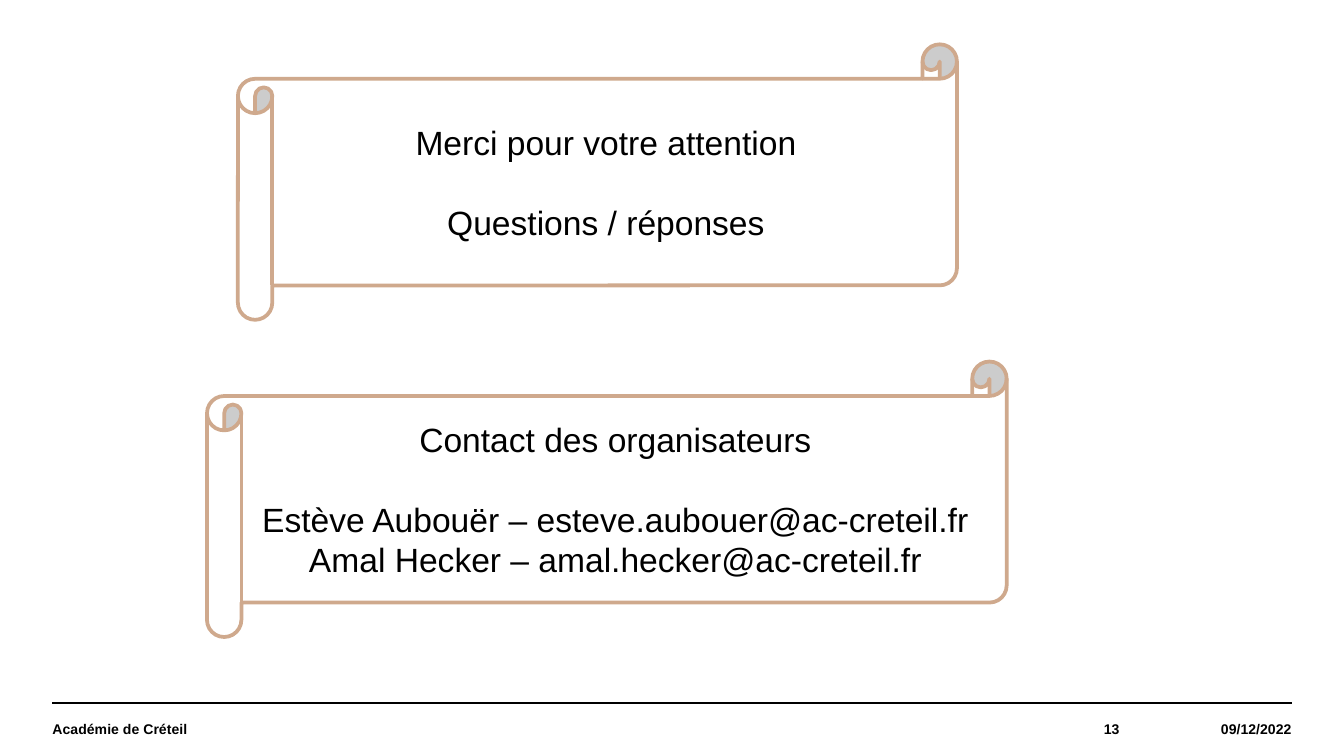
from dataclasses import dataclass

from lxml import etree
from pptx import Presentation
from pptx import util as u
from pptx.dml.color import RGBColor
from pptx.enum import shapes, text
from pptx.oxml.ns import qn


@dataclass(frozen=True)
class Theme:
    font: str = "Arial"
    ink: str = "000000"
    paper: str = "FFFFFF"
    scroll_edge: str = "CFA98D"
    body_size: float = 18
    footer_size: float = 7.5
    scroll_line: float = 2
    rule_line: float = 0.8
    heading_gap: float = 21


def write(paragraph, content, *, theme, size, bold=False,
          align=text.PP_ALIGN.LEFT, space_before=0):
    paragraph.alignment = align
    paragraph.space_before = u.Pt(space_before)
    run = paragraph.add_run()
    run.text = content
    run.font.name = theme.font
    run.font.size = u.Pt(size)
    run.font.bold = bold
    run.font.color.rgb = RGBColor.from_string(theme.ink)


class SlideBuilder:
    def __init__(self, slide, theme):
        self.slide = slide
        self.theme = theme

    def rule(self, left, right, y):
        rule = self.slide.shapes.add_connector(
            shapes.MSO_CONNECTOR.STRAIGHT,
            u.Inches(left), u.Inches(y), u.Inches(right), u.Inches(y))
        rule.line.color.rgb = RGBColor.from_string(self.theme.ink)
        rule.line.width = u.Pt(self.theme.rule_line)
        etree.SubElement(rule._element.spPr, qn("a:effectLst"))

    def footer(self, content, left, top, width, height, align):
        box = self.slide.shapes.add_textbox(
            u.Inches(left), u.Inches(top), u.Inches(width), u.Inches(height))
        frame = box.text_frame
        frame.word_wrap = True
        frame.vertical_anchor = text.MSO_ANCHOR.MIDDLE
        frame.margin_left = frame.margin_right = 0
        frame.margin_top = frame.margin_bottom = 0
        write(frame.paragraphs[0], content, theme=self.theme,
              size=self.theme.footer_size, bold=True, align=align)

    def scroll(self, heading, details, left, top, width, height):
        """Draw a scroll with a heading set apart from its detail lines."""
        scroll = self.slide.shapes.add_shape(
            shapes.MSO_SHAPE.HORIZONTAL_SCROLL,
            u.Inches(left), u.Inches(top), u.Inches(width), u.Inches(height))
        scroll.shadow.inherit = False
        scroll.fill.solid()
        scroll.fill.fore_color.rgb = RGBColor.from_string(self.theme.paper)
        scroll.line.color.rgb = RGBColor.from_string(self.theme.scroll_edge)
        scroll.line.width = u.Pt(self.theme.scroll_line)
        frame = scroll.text_frame
        frame.word_wrap = True
        frame.vertical_anchor = text.MSO_ANCHOR.MIDDLE
        for index, content in enumerate([heading, *details]):
            paragraph = frame.add_paragraph() if index else frame.paragraphs[0]
            write(paragraph, content, theme=self.theme,
                  size=self.theme.body_size, align=text.PP_ALIGN.CENTER,
                  space_before=self.theme.heading_gap if index == 1 else 0)


def main():
    deck = Presentation()
    deck.slide_width = u.Inches(10)
    deck.slide_height = deck.slide_width * 9 // 16
    closing = SlideBuilder(deck.slides.add_slide(deck.slide_layouts[6]), Theme())

    margin, footer_top, footer_height = 0.39, 5.23, 0.39
    closing.rule(margin, 10 - margin, footer_top)
    left = margin
    for content, width, align in (
        ("Académie de Créteil", 6.46, text.PP_ALIGN.LEFT),
        ("13", 1.48, text.PP_ALIGN.RIGHT),
        ("09/12/2022", 1.28, text.PP_ALIGN.RIGHT),
    ):
        closing.footer(content, left, footer_top, width, footer_height, align)
        left += width

    scroll_height = 2.05
    closing.scroll("Merci pour votre attention", ["Questions / réponses"],
                   1.77, 0.33, 5.35, scroll_height)
    closing.scroll("Contact des organisateurs",
                   ["Estève Aubouër – esteve.aubouer@ac-creteil.fr",
                    "Amal Hecker – amal.hecker@ac-creteil.fr"],
                   1.54, 2.69, 5.95, scroll_height)

    deck.save("out.pptx")


if __name__ == "__main__":
    main()
